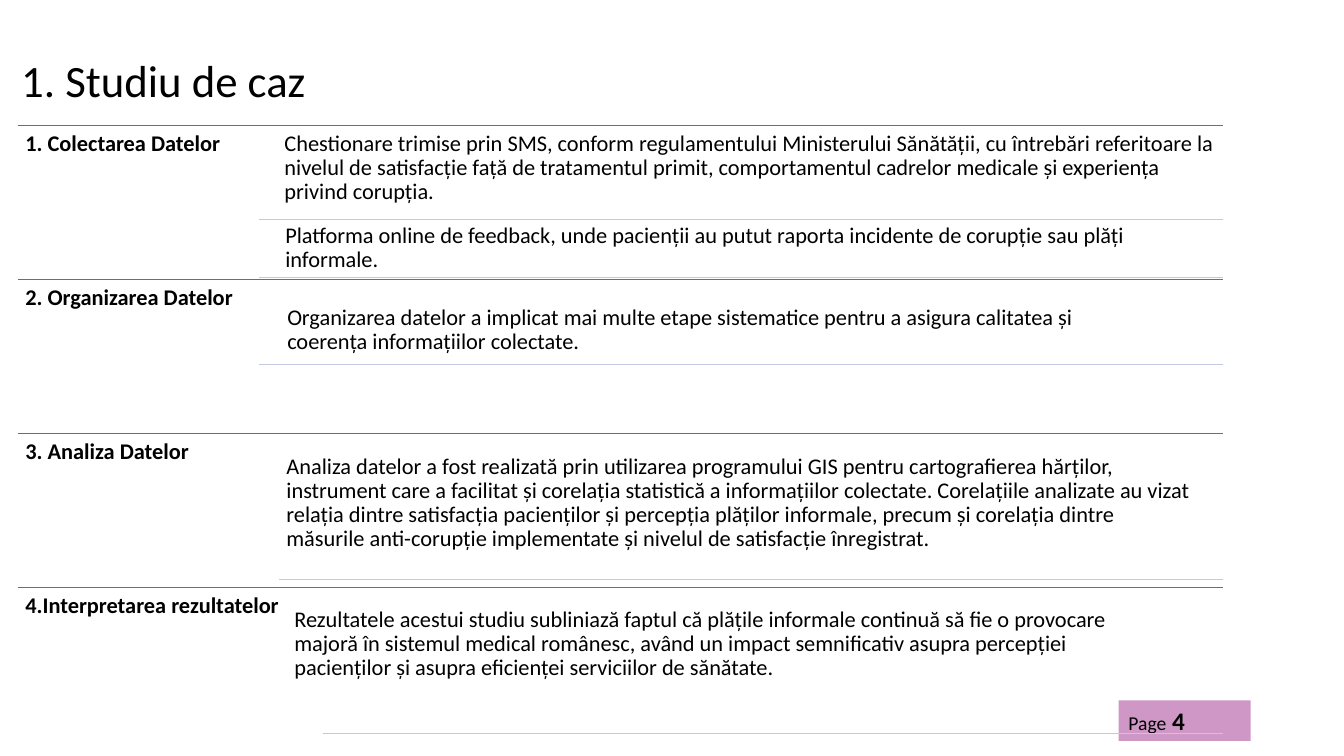
"""Build the case study slide: four numbered stages with their details."""
from lxml import etree
from pptx import Presentation
from pptx.dml.color import RGBColor as RGB
from pptx.enum.shapes import MSO_CONNECTOR as Conn, MSO_SHAPE as Shape
from pptx.enum.text import MSO_ANCHOR as Anchor, PP_ALIGN as Align
from pptx.oxml.ns import qn
from pptx.util import Cm, Pt

COLORS = {"text": "000000", "stage": "4472C4", "detail": "C1C9E4", "page": "9F318D"}
LEFT, RIGHT, TOP, PITCH = 0.46, 30.81, 3.15, 3.88
INSET = Cm(0.18)


def add_text(tf, text, size, bold=False, spacing=0.9):
    tf.word_wrap = True
    p = tf.paragraphs[0]
    p.alignment = Align.LEFT
    p.line_spacing = spacing
    r = p.add_run()
    r.text = text
    for name, value in {"name": "Calibri", "size": Pt(size), "bold": bold}.items():
        setattr(r.font, name, value)
    r.font.color.rgb = RGB.from_string(COLORS["text"])


def add_rule(left, top, color):
    line = s.shapes.add_connector(Conn.STRAIGHT, Cm(left), Cm(top), Cm(RIGHT), Cm(top))
    line.line.color.rgb = RGB.from_string(COLORS[color])
    line.line.width = Pt(0.5)
    etree.SubElement(line._element.spPr, qn("a:effectLst"))


prs = Presentation()
prs.slide_width, prs.slide_height = Cm(33.87), Cm(19.05)
s = prs.slides.add_slide(prs.slide_layouts[5])

title = s.shapes.title
title.left, title.top, title.width, title.height = Cm(0.28), Cm(0.89), Cm(29.21), Cm(2.39)
title.text_frame.vertical_anchor = Anchor.MIDDLE
add_text(title.text_frame, "1. Studiu de caz", 32)

page = s.shapes.add_shape(Shape.RECTANGLE, Cm(28.19), Cm(17.65), Cm(3.33), Cm(1.02))
page.shadow.inherit = False
page.fill.solid()
page.fill.fore_color.rgb = RGB.from_string(COLORS["page"])
fill_color = page._element.spPr.find(qn("a:solidFill"))[0]
etree.SubElement(fill_color, qn("a:alpha"), val="50000")
page.line.fill.background()
page.text_frame.vertical_anchor = Anchor.TOP
add_text(page.text_frame, "Page", 14, spacing=1.0)
add_text(page.text_frame, " 4", 18, bold=True, spacing=1.0)

stages = [
    ("1. Colectarea Datelor", 6.07, 3.88),
    ("2. Organizarea Datelor", 6.07, 3.88),
    ("3. Analiza Datelor", 6.58, 1.98),
    ("4.Interpretarea rezultatelor", 7.65, 3.88),
]
details = [
    (6.99, 3.15, 23.83, 2.29,
     "Chestionare trimise prin SMS, conform regulamentului Ministerului Sănătății, cu întrebări "
     "referitoare la nivelul de satisfacție față de tratamentul primit, comportamentul cadrelor "
     "medicale și experiența privind corupția."),
    (7.01, 5.46, 23.06, 1.52,
     "Platforma online de feedback, unde pacienții au putut raporta incidente de corupție sau "
     "plăți informale."),
    (7.06, 7.54, 21.59, 1.98,
     "Organizarea datelor a implicat mai multe etape sistematice pentru a asigura calitatea și "
     "coerența informațiilor colectate."),
    (7.04, 11.28, 23.32, 3.53,
     "Analiza datelor a fost realizată prin utilizarea programului GIS pentru cartografierea "
     "hărților, instrument care a facilitat și corelația statistică a informațiilor colectate. "
     "Corelațiile analizate au vizat relația dintre satisfacția pacienților și percepția plăților "
     "informale, precum și corelația dintre măsurile anti-corupție implementate și nivelul de "
     "satisfacție înregistrat."),
    (7.24, 15.14, 22.28, 3.53,
     "Rezultatele acestui studiu subliniază faptul că plățile informale continuă să fie o "
     "provocare majoră în sistemul medical românesc, având un impact semnificativ asupra "
     "percepției pacienților și asupra eficienței serviciilor de sănătate."),
]
detail_rules = [(6.53, 5.54), (6.53, 6.98), (6.53, 9.19), (7.04, 14.6), (8.13, 18.49)]

boxes = [(LEFT, TOP + i * PITCH, width, height, text, True)
         for i, (text, width, height) in enumerate(stages)]
boxes += [(*detail, False) for detail in details]

for left, top in detail_rules:
    add_rule(left, top, "detail")
for i in range(len(stages)):
    add_rule(LEFT, TOP + i * PITCH, "stage")

for left, top, width, height, text, bold in boxes:
    tf = s.shapes.add_textbox(Cm(left), Cm(top), Cm(width), Cm(height)).text_frame
    for side in ("left", "top", "right", "bottom"):
        setattr(tf, f"margin_{side}", INSET)
    add_text(tf, text, 16, bold)

prs.save("out.pptx")
